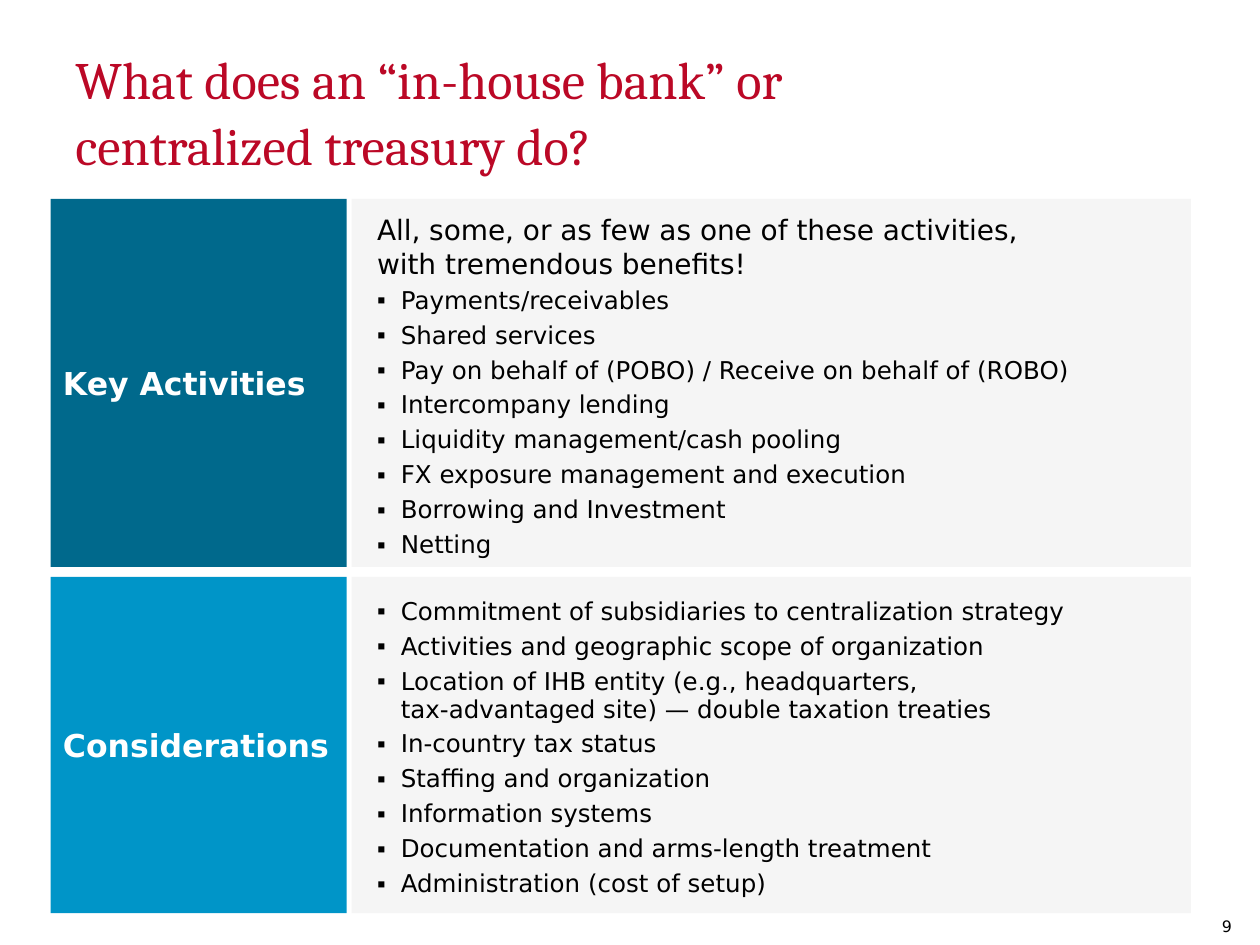
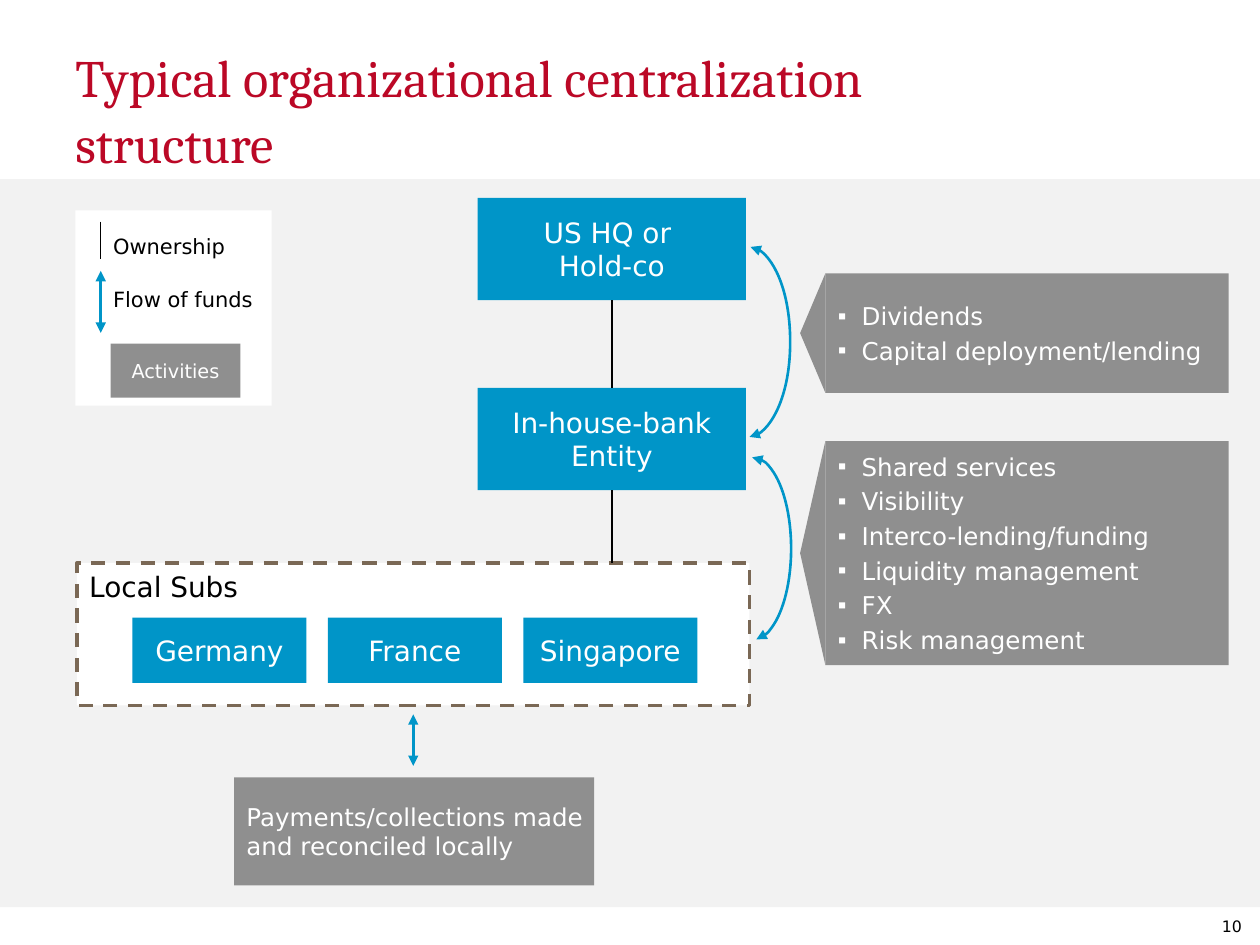
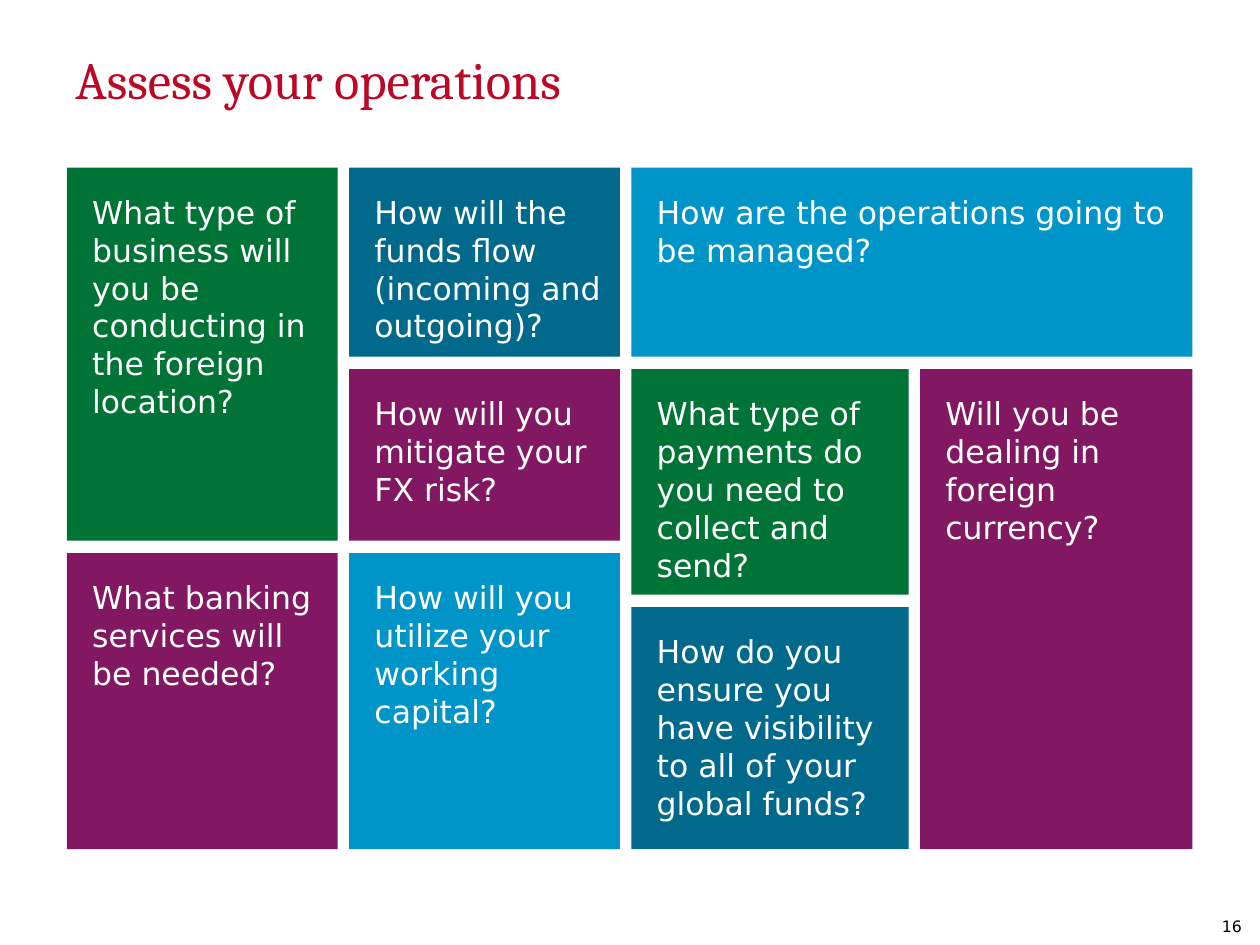
from collections import namedtuple

from lxml.etree import SubElement
from pptx import Presentation
from pptx.dml.color import RGBColor
from pptx.enum.dml import MSO_LINE
from pptx.enum.shapes import MSO_CONNECTOR as Connector, MSO_SHAPE as Shape
from pptx.enum.text import MSO_ANCHOR as Anchor, MSO_AUTO_SIZE as AutoSize, PP_ALIGN as Align
from pptx.oxml.ns import qn
from pptx.util import Cm, Pt

COLOURS = {
    "title": "BB0826",
    "navy": "00698C",
    "blue": "0095C8",
    "green": "007337",
    "plum": "821861",
    "grey": "8F8F8F",
    "panel": "F5F5F5",
    "band": "F2F2F2",
    "brown": "7A6855",
    "white": "FFFFFF",
    "black": "000000",
}
TITLE_FONT = "Cambria"
BODY_FONT = "DejaVu Sans"
INSETS = (0.25, 0.13, 0.25, 0.13)
TWO_CONTENT, TITLE_ONLY = 3, 5

Box = namedtuple("Box", "left top width height")


def lengths(box):
    return [Cm(value) for value in box]


def within(box, left, top, width, height):
    return Box(box.left + left, box.top + top, width, height)


def rgb(name):
    return RGBColor.from_string(COLOURS[name])


def style_font(para, size, colour, bold=False, name=BODY_FONT):
    para.font.name = name
    para.font.size = Pt(size)
    para.font.bold = bold
    para.font.color.rgb = rgb(colour)


def set_frame(frame, anchor, insets=INSETS, wrap=True):
    frame.word_wrap = wrap
    frame.auto_size = AutoSize.NONE
    frame.vertical_anchor = anchor
    sides = [Cm(value) for value in insets]
    frame.margin_left, frame.margin_top, frame.margin_right, frame.margin_bottom = sides


def write(frame, lines, size, colour, align=Align.LEFT, bold=False, before=0):
    for index, line in enumerate(lines):
        para = frame.paragraphs[0] if index == 0 else frame.add_paragraph()
        para.text = line
        para.alignment = align
        para.space_before = Pt(before)
        style_font(para, size, colour, bold)


def add_rect(page, box, fill, lines=(), size=16, colour="white", align=Align.LEFT,
             anchor=Anchor.MIDDLE, insets=INSETS, wrap=True, bold=False):
    rect = page.shapes.add_shape(Shape.RECTANGLE, *lengths(box))
    rect.shadow.inherit = False
    rect.fill.solid()
    rect.fill.fore_color.rgb = rgb(fill)
    rect.line.fill.background()
    set_frame(rect.text_frame, anchor, insets, wrap)
    write(rect.text_frame, lines, size, colour, align, bold)
    return rect


def add_text(page, box, lines, size, before=0):
    text = page.shapes.add_textbox(*lengths(box))
    set_frame(text.text_frame, Anchor.TOP)
    write(text.text_frame, lines, size, "black", before=before)


def add_arrowheads(shape):
    outline = shape.element.spPr.get_or_add_ln()
    for end in ("a:headEnd", "a:tailEnd"):
        SubElement(outline, qn(end), type="triangle")


def add_line(page, start, end, colour="black", width=0.75, arrows=False, kind=Connector.STRAIGHT):
    line = page.shapes.add_connector(kind, *lengths(start + end))
    line.line.color.rgb = rgb(colour)
    line.line.width = Pt(width)
    if arrows:
        add_arrowheads(line)
    SubElement(line.element.spPr, qn("a:effectLst"))
    return line


def add_flow(page, start, end, kind=Connector.STRAIGHT):
    return add_line(page, start, end, "blue", 1.5, True, kind)


def fill_list(holder, box, fill, items, colour, insets=INSETS, spacing=1.0, before=3, lead=None):
    holder.left, holder.top, holder.width, holder.height = lengths(box)
    holder.fill.solid()
    holder.fill.fore_color.rgb = rgb(fill)
    frame = holder.text_frame
    set_frame(frame, Anchor.MIDDLE, insets)
    lines = [lead, *items] if lead else items
    for index, line in enumerate(lines):
        para = frame.paragraphs[0] if index == 0 else frame.add_paragraph()
        para.text = line
        para.space_before = Pt(before)
        properties = para._p.get_or_add_pPr()
        is_lead = line == lead
        indent = 0 if is_lead else Cm(0.48)
        properties.set("marL", str(indent))
        properties.set("indent", str(-indent))
        para.line_spacing = 1.0 if is_lead else spacing
        if is_lead:
            SubElement(properties, qn("a:buNone"))
        else:
            SubElement(properties, qn("a:buChar"), char="▪")
        style_font(para, 16 if is_lead else 14, colour)


def add_page(deck, layout, title, number, top=0.89):
    page = deck.slides.add_slide(deck.slide_layouts[layout])
    heading = page.shapes.title
    heading.left, heading.top, heading.width, heading.height = lengths(Box(1.52, top, 22.86, 3.18))
    set_frame(heading.text_frame, Anchor.TOP, (0, 0, 0, 0))
    para = heading.text_frame.paragraphs[0]
    para.text = title
    para.alignment = Align.LEFT
    para.line_spacing = 1.05
    style_font(para, 30, "title", name=TITLE_FONT)
    add_text(page, Box(24.38, 18.36, 1.02, 0.69), [str(number)], 9)
    return page


def add_topic_row(page, holder, box, label, fill, items, lead=None):
    label_width, gap = 5.97, 0.1
    add_rect(page, box._replace(width=label_width), fill, [label], 18, bold=True)
    offset = label_width + gap
    panel = within(box, offset, 0, box.width - offset, box.height)
    fill_list(holder, panel, "panel", items, "black", (0.51, 0.25, 0.25, 0.13), 0.95, 4, lead)


def add_callout(page, holder, box, items):
    fill_list(holder, box, "grey", items, "white")
    depth = 0.51
    pointer_box = within(box, -(depth + box.height) / 2, (box.height - depth) / 2, box.height, depth)
    pointer = page.shapes.add_shape(Shape.ISOSCELES_TRIANGLE, *lengths(pointer_box))
    pointer.rotation = 270
    pointer.shadow.inherit = False
    pointer.fill.solid()
    pointer.fill.fore_color.rgb = rgb("grey")
    pointer.line.fill.background()


def add_legend(page, box):
    add_rect(page, box, "white")
    x = box.left + 0.51
    add_line(page, (x, box.top + 0.23), (x, box.top + 0.99))
    add_flow(page, (x, box.top + 1.22), (x, box.top + 2.47))
    add_rect(page, within(box, 0.71, 2.69, 2.62, 1.09), "grey", ["Activities"], 11,
             align=Align.CENTER, wrap=False)
    add_text(page, within(box, 0.51, 0.33, 3.48, 2.13), ["Ownership", "Flow of funds"], 12, 16)


def add_local_subs(page, box):
    frame = add_rect(page, box, "white", ["Local Subs"], colour="black", anchor=Anchor.TOP)
    frame.line.color.rgb = rgb("brown")
    frame.line.width = Pt(2)
    frame.line.dash_style = MSO_LINE.DASH
    for index, country in enumerate(["Germany", "France", "Singapore"]):
        add_rect(page, within(box, 1.12 + 3.94 * index, 1.1, 3.51, 1.32), "blue", [country],
                 align=Align.CENTER, wrap=False)


def add_entities(page, box):
    texts = [["US HQ or ", "Hold-co"], ["In-house-bank", "Entity"]]
    parent, bank = [
        add_rect(page, within(box, 0, 3.83 * index, box.width, 2.06), "blue", lines,
                 align=Align.CENTER, wrap=False)
        for index, lines in enumerate(texts)
    ]
    x = box.left + box.width / 2
    ownership = add_line(page, (x, box.top + 2.06), (x, box.top + 3.83))
    ownership.begin_connect(parent, 2)
    ownership.end_connect(bank, 0)
    add_line(page, (x, box.top + 5.89), (x, box.top + box.height)).begin_connect(bank, 2)


def add_curved_flows(page):
    curve = add_flow(page, (15.11, 8.81), (15.13, 4.98), Connector.CURVE)
    guides = curve.element.spPr.find(qn("a:prstGeom")).get_or_add_avLst()
    SubElement(guides, qn("a:gd"), name="adj1", fmla="val 4100000")
    arc = page.shapes.add_shape(Shape.ARC, *lengths(Box(14.38, 9.22, 1.57, 3.68)))
    arc.adjustments[0] = 162
    arc.adjustments[1] = 52.43
    arc.shadow.inherit = False
    arc.fill.background()
    arc.line.color.rgb = rgb("blue")
    arc.line.width = Pt(1.5)
    add_arrowheads(arc)


def add_tile(page, box, fill, text):
    add_rect(page, box, fill, [text], 18, anchor=Anchor.TOP, insets=(0.51, 0.51, 0.1, 0.13))


def add_tile_column(page, box, tiles, gap=0.25):
    top = box.top
    for height, fill, text in tiles:
        add_tile(page, box._replace(top=top, height=height), fill, text)
        top += height + gap


def build_activities(deck):
    page = add_page(deck, TWO_CONTENT, "What does an “in-house bank” or \vcentralized treasury do?", 9)
    activities, considerations = list(page.placeholders)[1:3]
    add_topic_row(page, activities, Box(1.02, 4.01, 22.99, 7.42), "Key Activities", "navy", [
        "Payments/receivables",
        "Shared services",
        "Pay on behalf of (POBO) / Receive on behalf of (ROBO)",
        "Intercompany lending",
        "Liquidity management/cash pooling",
        "FX exposure management and execution",
        "Borrowing and Investment",
        "Netting",
    ], "All, some, or as few as one of these activities, \vwith tremendous benefits!")
    add_topic_row(page, considerations, Box(1.02, 11.63, 22.99, 6.78), "Considerations", "blue", [
        "Commitment of subsidiaries to centralization strategy",
        "Activities and geographic scope of organization",
        "Location of IHB entity (e.g., headquarters, \vtax-advantaged site) — double taxation treaties",
        "In-country tax status",
        "Staffing and organization",
        "Information systems",
        "Documentation and arms-length treatment",
        "Administration (cost of setup)",
    ])


def build_structure(deck):
    page = add_page(deck, TWO_CONTENT, "Typical organizational centralization \vstructure", 10, 0.84)
    band = add_rect(page, Box(0, 3.61, 25.4, 14.68), "band")
    page.shapes.title.element.addprevious(band.element)
    capital, services = list(page.placeholders)[1:3]
    add_callout(page, capital, Box(16.64, 5.51, 8.13, 2.41),
                ["Dividends", "Capital deployment/lending"])
    add_callout(page, services, Box(16.64, 8.89, 8.13, 4.52), [
        "Shared services",
        "Visibility",
        "Interco-lending/funding",
        "Liquidity management",
        "FX",
        "Risk management",
    ])
    add_local_subs(page, Box(1.55, 11.35, 13.56, 2.87))
    add_entities(page, Box(9.63, 3.99, 5.41, 7.36))
    add_flow(page, (8.33, 14.4), (8.33, 15.44))
    add_rect(page, Box(4.72, 15.67, 7.26, 2.18), "grey",
             ["Payments/collections made \vand reconciled locally"], 14, wrap=False)
    add_curved_flows(page)
    add_legend(page, Box(1.52, 4.24, 3.96, 3.94))


def build_assessment(deck):
    page = add_page(deck, TITLE_ONLY, "Assess your operations", 16)
    gap, top, lower_top = 0.23, 3.38, 7.44
    columns = [
        (5.46, top, [
            (7.52, "green", "What type of business will you be conducting in the foreign location?"),
            (5.97, "plum", "What banking services will \vbe needed?"),
        ]),
        (5.46, top, [
            (3.81, "navy", "How will the funds flow (incoming and outgoing)?"),
            (3.46, "plum", "How will you mitigate your FX risk?"),
            (5.97, "blue", "How will you utilize your working capital?"),
        ]),
        (5.59, lower_top, [
            (4.55, "green", "What type of payments do you need to collect and send?"),
            (4.88, "navy", "How do you ensure you have visibility to all of your global funds?"),
        ]),
        (5.49, lower_top, [
            (9.68, "plum", "Will you be dealing in foreign currency?"),
        ]),
    ]
    left = 1.35
    for width, start, tiles in columns:
        add_tile_column(page, Box(left, start, width, 0), tiles)
        left += width + gap
    add_tile(page, Box(12.73, top, 11.31, 3.81), "blue", "How are the operations going to be managed?")


def main():
    deck = Presentation()
    deck.slide_width, deck.slide_height = Cm(25.4), Cm(19.05)
    build_activities(deck)
    build_structure(deck)
    build_assessment(deck)
    deck.save("out.pptx")


if __name__ == "__main__":
    main()
